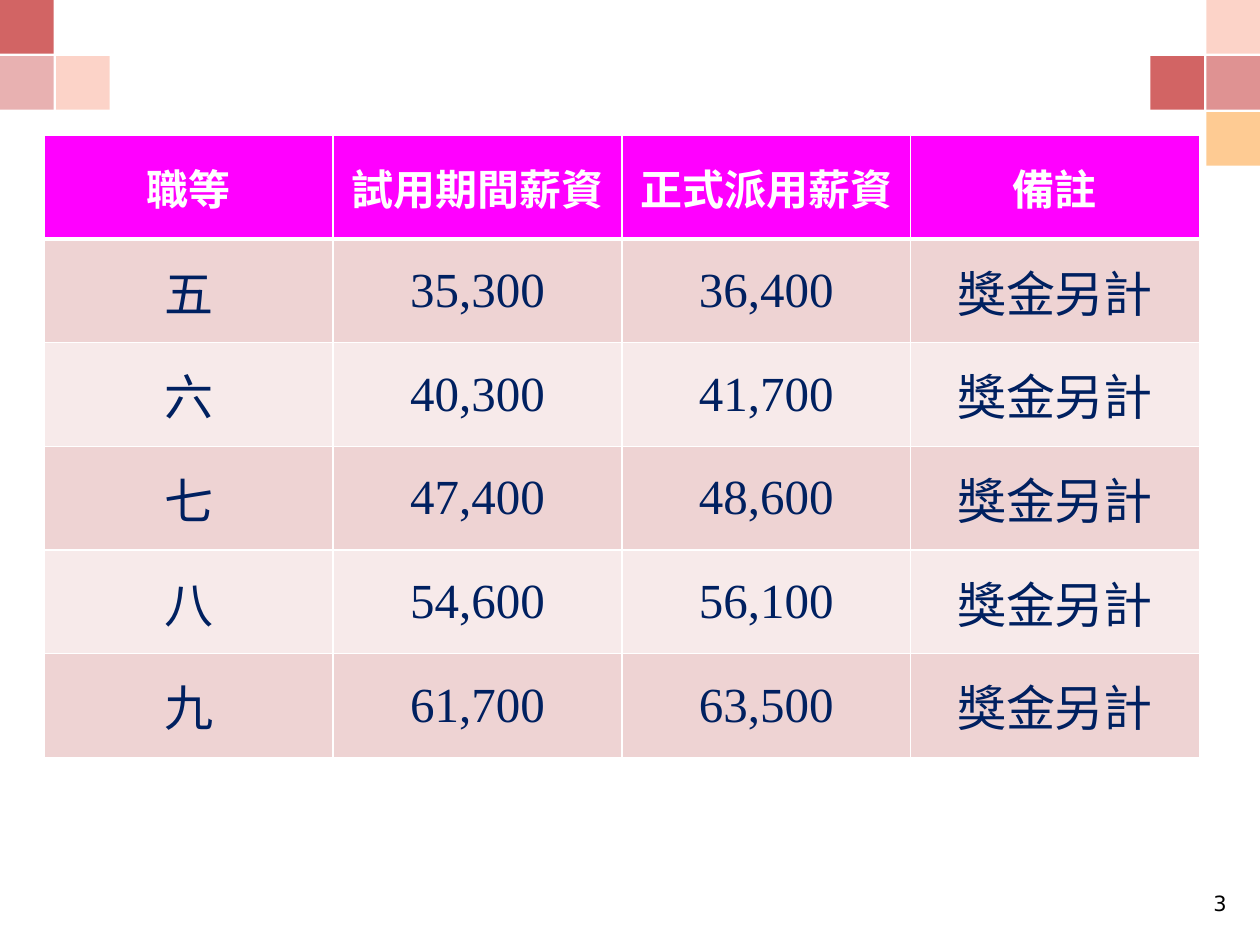
from lxml.etree import SubElement
from pptx import Presentation
from pptx.dml.color import RGBColor
from pptx.enum.shapes import MSO_SHAPE
from pptx.enum.text import MSO_ANCHOR, PP_ALIGN
from pptx.oxml import parse_xml
from pptx.oxml.ns import nsdecls, qn
from pptx.util import Pt

COLORS = {
    "red": "D26464", "peach": "FBA993", "amber": "FEA94C",
    "head": "FF00FF", "odd": "EED3D3", "even": "F7EAEA",
    "navy": "002060", "white": "FFFFFF", "black": "000000",
}
CJK, SERIF, SANS = "Noto Sans CJK SC", "Times New Roman", "DejaVu Sans"
TILE, STEP = 30.7, 32

# Column, row, colour, opacity in percent
LEFT = [(1, 1, "peach", 50), (0, 0, "red", 100), (0, 1, "red", 50)]
RIGHT = [(1, 2, "amber", 60), (1, 0, "peach", 50),
         (1, 1, "red", 70), (0, 1, "red", 100)]

HEADS = ["職等", "試用期間薪資", "正式派用薪資", "備註"]
NOTE = "獎金另計"
GRADES = [
    ("五", "35,300", "36,400"),
    ("六", "40,300", "41,700"),
    ("七", "47,400", "48,600"),
    ("八", "54,600", "56,100"),
    ("九", "61,700", "63,500"),
]


def color(name):
    return RGBColor.from_string(COLORS[name])


def add_run(para, text, size, face, ink, bold=False):
    run = para.add_run()
    run.text = text
    font = run.font
    font.size, font.name, font.bold = Pt(size), face, bold
    font.color.rgb = color(ink)
    if face == CJK:
        SubElement(run._r.get_or_add_rPr(), qn("a:ea"), typeface=face)


def add_tiles(slide, left, top, tiles):
    for col, row, name, alpha in tiles:
        tile = slide.shapes.add_shape(
            MSO_SHAPE.RECTANGLE, Pt(left + col * STEP), Pt(top + row * STEP),
            Pt(TILE), Pt(TILE))
        tile.shadow.inherit = False
        tile.line.fill.background()
        tile.fill.solid()
        tile.fill.fore_color.rgb = color(name)
        if alpha < 100:
            tone = tile.fill._xPr.find(".//" + qn("a:srgbClr"))
            SubElement(tone, qn("a:alpha"), val=str(alpha * 1000))


def add_lines(cell, top, base):
    """Draw white cell borders, with the top and bottom widths in points."""
    props = cell._tc.get_or_add_tcPr()
    sides = [("L", 1), ("R", 1), ("T", top), ("B", base)]
    for spot, (side, width) in enumerate(sides):
        props.insert(spot, parse_xml(
            f'<a:ln{side} {nsdecls("a")} w="{Pt(width)}"><a:solidFill>'
            f'<a:srgbClr val="{COLORS["white"]}"/></a:solidFill></a:ln{side}>'))


def add_pay(slide, left, top, width, height):
    rows = [HEADS] + [[*grade, NOTE] for grade in GRADES]
    table = slide.shapes.add_table(
        len(rows), len(HEADS), Pt(left), Pt(top), Pt(width), Pt(height)).table
    for col in table.columns:
        col.width = Pt(width / len(HEADS))
    for i, row in enumerate(rows):
        table.rows[i].height = Pt(height / len(rows))
        for j, text in enumerate(row):
            cell = table.cell(i, j)
            cell.vertical_anchor = MSO_ANCHOR.MIDDLE
            cell.fill.solid()
            fill = "head" if i == 0 else "odd" if i % 2 else "even"
            cell.fill.fore_color.rgb = color(fill)
            add_lines(cell, 3 if i == 1 else 1, 3 if i == 0 else 1)
            para = cell.text_frame.paragraphs[0]
            para.alignment = PP_ALIGN.CENTER
            if i == 0:
                add_run(para, text, 24, CJK, "white", True)
            else:
                face = SERIF if j in (1, 2) else CJK
                add_run(para, text, 28, face, "navy")


def add_number(slide, left, top, width, height):
    box = slide.shapes.add_textbox(Pt(left), Pt(top), Pt(width), Pt(height))
    frame = box.text_frame
    frame.word_wrap = True
    para = frame.paragraphs[0]
    para.alignment = PP_ALIGN.RIGHT
    add_run(para, "3", 12, SANS, "black")


def main():
    deck = Presentation()
    deck.slide_width, deck.slide_height = Pt(720), Pt(540)
    slide = deck.slides.add_slide(deck.slide_layouts[6])
    add_tiles(slide, 0, 0, LEFT)
    add_tiles(slide, 720 - TILE - STEP, 0, RIGHT)
    add_pay(slide, 25.4, 77.3, 660, 355.5)
    add_number(slide, 672, 505.5, 36, 25)
    deck.save("out.pptx")


if __name__ == "__main__":
    main()
